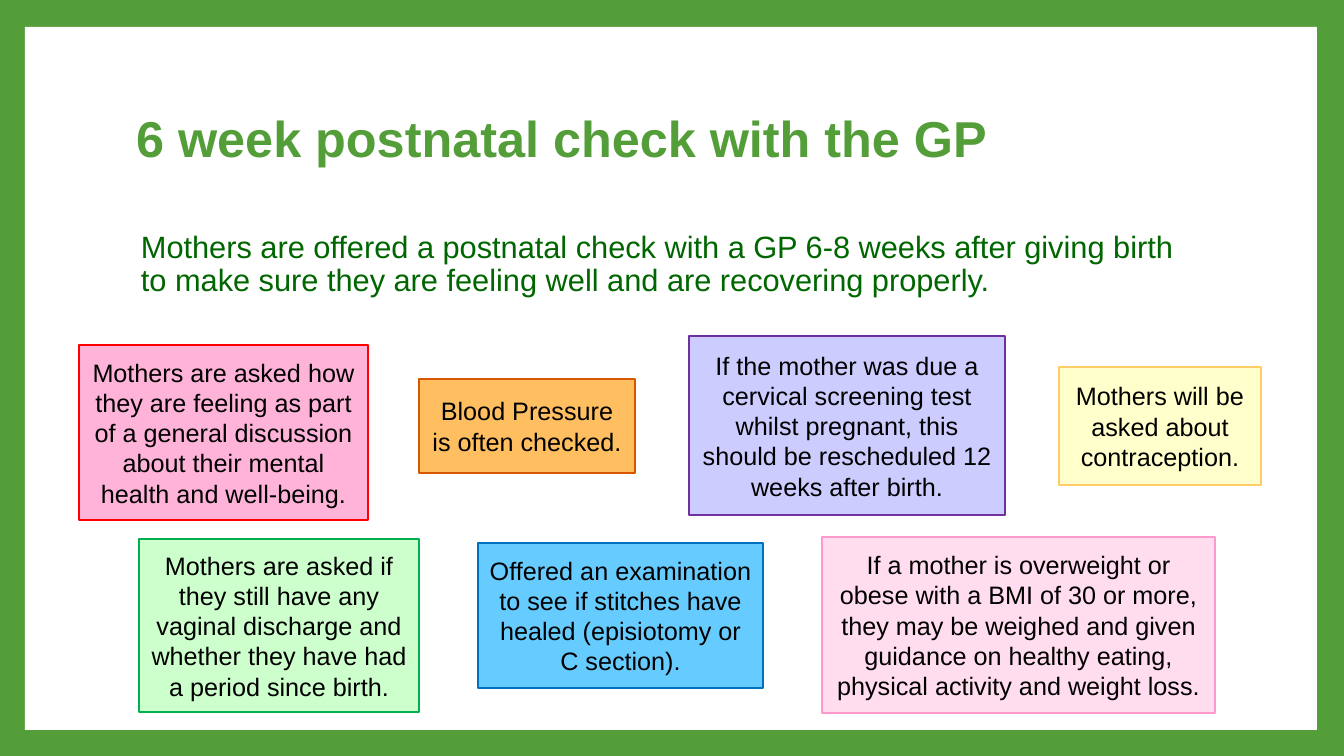
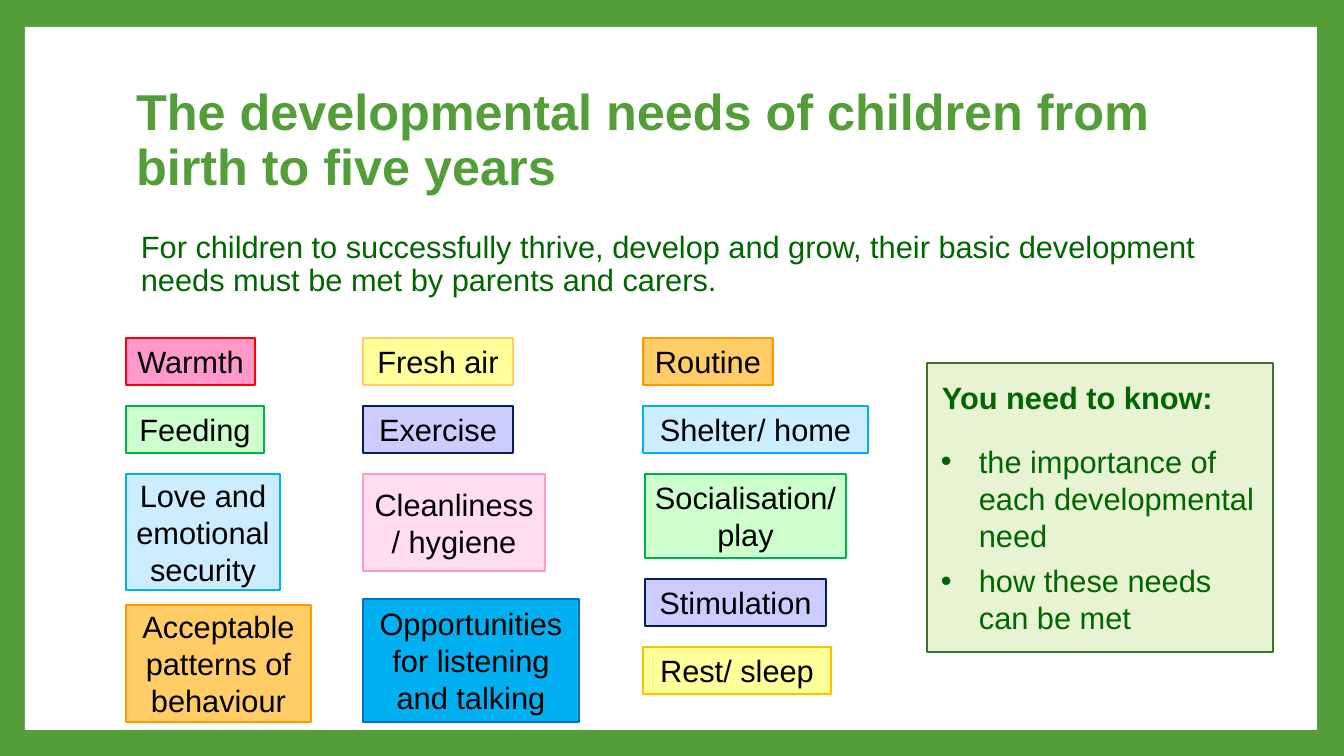
from dataclasses import dataclass, field

from lxml import etree
from pptx import Presentation, util as u
from pptx.dml.color import RGBColor
from pptx.enum import shapes, text
from pptx.oxml.ns import qn

PX = 914400 / 100.8


@dataclass
class Theme:
    font: str = "Arial"
    green: str = "549E39"
    dark: str = "006600"
    black: str = "000000"
    white: str = "FFFFFF"
    head: int = 36
    body: int = 22
    small: int = 18
    edge: float = 1.5
    # fill and outline of each kind of box
    tones: dict = field(default_factory=lambda: {
        "pink": ("FFB3D9", "FF0000"),
        "rose": ("FF99CC", "FF0000"),
        "blush": ("FFDDEE", "FF99CC"),
        "mint": ("CCFFCC", "00B050"),
        "leaf": ("E8F3D4", "3E752A"),
        "orange": ("FFBF61", "D65700"),
        "amber": ("FFCC66", "FF9900"),
        "gold": ("FFFF99", "FFC000"),
        "lemon": ("FFFF99", "FFCC66"),
        "cream": ("FFFFCC", "FFCC66"),
        "sky": ("CCECFF", "00B0F0"),
        "blue": ("66CCFF", "0070C0"),
        "azure": ("00B0F0", "0070C0"),
        "lilac": ("CCCCFF", "7030A0"),
        "navy": ("CCCCFF", "002060"),
    })


T = Theme()


def box(slide, rect, fill, line=None):
    """Add a flat rectangle with wrapped, vertically centred text."""
    shape = slide.shapes.add_shape(
        shapes.MSO_SHAPE.RECTANGLE, *(round(n * PX) for n in rect))
    shape.shadow.inherit = False
    shape.fill.solid()
    shape.fill.fore_color.rgb = RGBColor.from_string(fill)
    if line:
        shape.line.color.rgb = RGBColor.from_string(line)
        shape.line.width = u.Pt(T.edge)
    else:
        shape.line.fill.background()
    shape.text_frame.word_wrap = True
    shape.text_frame.vertical_anchor = text.MSO_ANCHOR.MIDDLE
    return shape


def write(par, words, size, color, bold=False, align=text.PP_ALIGN.LEFT):
    """Add one styled run to an aligned paragraph."""
    par.alignment = align
    run = par.add_run()
    run.text = words
    run.font.name = T.font
    run.font.size = u.Pt(size)
    run.font.bold = bold
    run.font.color.rgb = RGBColor.from_string(color)


CHECKS = [
    ((79, 345, 289, 175), "pink", "Mothers are asked how they are feeling as part of a "
     "general discussion about their mental health and well-being."),
    ((139, 539, 280, 173), "mint", "Mothers are asked if they still have any vaginal "
     "discharge and whether they have had a period since birth."),
    ((419, 379, 216, 94), "orange", "Blood Pressure is often checked."),
    ((478, 543, 285, 145), "blue", "Offered an examination to see if stitches have "
     "healed (episiotomy or C section)."),
    ((689, 336, 316, 179), "lilac", "If the mother was due a cervical screening test "
     "whilst pregnant, this should be rescheduled 12 weeks after birth."),
    ((1059, 367, 202, 118), "cream", "Mothers will be asked about contraception."),
    ((822, 537, 393, 176), "blush", "If a mother is overweight or obese with a BMI of 30 "
     "or more, they may be weighed and given guidance on healthy eating, physical "
     "activity and weight loss."),
]

ROW = 47
NEEDS = [
    ((126, 338, 129, ROW), "rose", "Warmth"),
    ((126, 406, 138, ROW), "mint", "Feeding"),
    ((126, 474, 154, 116), "sky", "Love and emotional security"),
    ((126, 605, 185, 117), "amber", "Acceptable patterns of behaviour"),
    ((363, 338, 150, ROW), "lemon", "Fresh air"),
    ((363, 406, 150, ROW), "navy", "Exercise"),
    ((363, 474, 182, 97), "blush", "Cleanliness/ hygiene"),
    ((363, 599, 216, 123), "azure", "Opportunities for listening and talking"),
    ((643, 338, 130, ROW), "amber", "Routine"),
    ((643, 406, 225, ROW), "sky", "Shelter/ home"),
    ((645, 474, 201, 84), "mint", "Socialisation/ play"),
    ((645, 579, 181, ROW), "navy", "Stimulation"),
    ((643, 647, 188, ROW), "gold", "Rest/ sleep"),
]

PAGES = [
    ("6 week postnatal check with the GP",
     "Mothers are offered a postnatal check with a GP 6-8 weeks after giving birth to "
     "make sure they are feeling well and are recovering properly.",
     T.small, CHECKS),
    ("The developmental needs of children from birth to five years",
     "For children to successfully thrive, develop and grow, their basic development "
     "needs must be met by parents and carers.",
     T.body, NEEDS),
]

deck = Presentation()
deck.slide_width = round(1344 * PX)
deck.slide_height = round(756 * PX)
layout = deck.slide_layouts[5]
layout.background.fill.solid()
layout.background.fill.fore_color.rgb = RGBColor.from_string(T.green)

for head, intro, size, cards in PAGES:
    slide = deck.slides.add_slide(layout)
    if len(deck.slides) == 1:
        # The white panel belongs to the layout, behind its placeholders
        panel = box(slide, (25, 27, 1292, 703), T.white)
        layout.shapes.element.insert(2, panel.element)

    title = slide.shapes.title
    title.left, title.top, title.width, title.height = (
        round(n * PX) for n in (126, 67, 1089, 149))
    frame = title.text_frame
    frame.word_wrap = True
    frame.auto_size = text.MSO_AUTO_SIZE.NONE
    frame.vertical_anchor = text.MSO_ANCHOR.MIDDLE
    frame.paragraphs[0].line_spacing = 0.9
    write(frame.paragraphs[0], head, T.head, T.green, True)

    lead = slide.shapes.add_textbox(*(round(n * PX) for n in (126, 227, 1089, 84)))
    lead.text_frame.word_wrap = True
    par = lead.text_frame.paragraphs[0]
    par.line_spacing = 0.9
    par._p.get_or_add_pPr().set("marL", str(round(5 * PX)))
    write(par, intro, T.body, T.dark)

    for rect, tone, words in cards:
        card = box(slide, rect, *T.tones[tone])
        write(card.text_frame.paragraphs[0], words, size, T.black,
              align=text.PP_ALIGN.CENTER)

know = box(slide, (927, 363, 346, 289), *T.tones["leaf"]).text_frame
par = know.paragraphs[0]
par.space_before = u.Pt(6)
par._p.get_or_add_pPr().set("marL", str(round(5 * PX)))
write(par, "You need to know:", T.body, T.dark, True)
for words, gap in [("the importance of each developmental need", 19),
                   ("how these needs can be met", 6)]:
    par = know.add_paragraph()
    par.space_before = u.Pt(gap)
    props = par._p.get_or_add_pPr()
    props.set("marL", str(round(42 * PX)))
    props.set("indent", str(round(-38 * PX)))
    etree.SubElement(props, qn("a:buFont"), typeface=T.font)
    etree.SubElement(props, qn("a:buChar"), char="•")
    write(par, words, T.body, T.dark)

deck.save("out.pptx")
